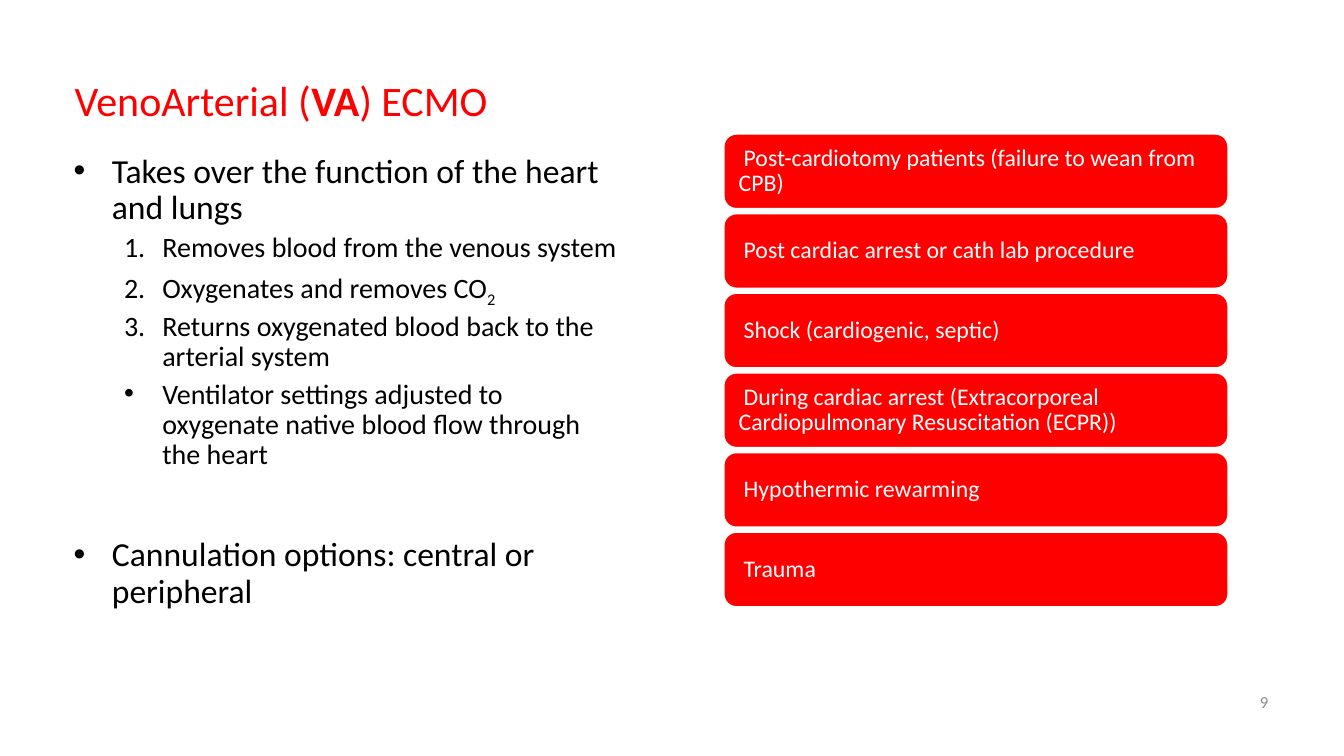
"""Builds the slide on VenoArterial ECMO."""
from lxml.etree import SubElement
from pptx import Presentation
from pptx.dml.color import RGBColor
from pptx.enum.shapes import MSO_SHAPE as Shape
from pptx.enum.text import MSO_ANCHOR as Anchor, MSO_AUTO_SIZE as AutoSize, PP_ALIGN as Align
from pptx.oxml.ns import qn
from pptx.util import Inches, Pt

RED, WHITE, BLACK, GREY = "FF0000", "FFFFFF", "000000", "8C8C8C"
INDICATIONS = [
    "Post-cardiotomy patients (failure to wean from CPB)",
    "Post cardiac arrest or cath lab procedure",
    "Shock (cardiogenic, septic)",
    "During cardiac arrest (Extracorporeal Cardiopulmonary Resuscitation (ECPR))",
    "Hypothermic rewarming",
    "Trauma",
]
POINTS = [
    (0, "•", 0, ["Takes over the function of the heart and lungs"]),
    (1, "1.", 5, ["Removes blood from the venous system"]),
    (1, "1.", 5, ["Oxygenates and removes CO", "2"]),
    (1, "1.", 5, ["Returns oxygenated blood back to the arterial system"]),
    (1, "•", 5, ["Ventilator settings adjusted to oxygenate native blood flow through the heart"]),
    (0, "•", 48, ["Cannulation options: central or peripheral"]),
]


def color(hex_value):
    """Turn a hex string into a colour."""
    return RGBColor.from_string(hex_value)


def add_run(paragraph, text, size, hex_value, bold=False):
    """Add one formatted run and return it."""
    run = paragraph.add_run()
    run.text = text
    run.font.name = "Calibri"
    run.font.size = Pt(size)
    run.font.bold = bold
    run.font.color.rgb = color(hex_value)
    return run


def place(shape, left, top, width, height, anchor):
    """Position a text shape and return its wrapped text frame."""
    shape.left, shape.top = Inches(left), Inches(top)
    shape.width, shape.height = Inches(width), Inches(height)
    frame = shape.text_frame
    frame.auto_size = AutoSize.NONE
    frame.word_wrap = True
    frame.vertical_anchor = anchor
    return frame


def set_indent(paragraph, margin, first_line):
    """Set the left margin and first-line indent of a paragraph."""
    properties = paragraph._p.get_or_add_pPr()
    properties.set("marL", str(Inches(margin)))
    properties.set("indent", str(Inches(first_line)))
    return properties


def set_bullet(paragraph, mark, margin):
    """Give a paragraph a hanging bullet or automatic number."""
    properties = set_indent(paragraph, margin, -0.38)
    if mark == "1.":
        SubElement(properties, qn("a:buFont"), typeface="+mj-lt")
        SubElement(properties, qn("a:buAutoNum"), type="arabicPeriod")
    else:
        SubElement(properties, qn("a:buFont"), typeface="Arial")
        SubElement(properties, qn("a:buChar"), char=mark)


def fill_title(title):
    """Write the slide title."""
    paragraph = place(title, 0.64, 0.73, 5.61, 0.59, Anchor.MIDDLE).paragraphs[0]
    paragraph.alignment = Align.LEFT
    paragraph.line_spacing = 0.9
    for text, bold in [("VenoArterial (", False), ("VA", True), (") ECMO", False)]:
        add_run(paragraph, text, 30, RED, bold)


def fill_points(body):
    """Write the two-level list."""
    frame = place(body, 0.63, 1.48, 5.62, 4.85, Anchor.TOP)
    for index, (level, mark, space, texts) in enumerate(POINTS):
        paragraph = frame.add_paragraph() if index else frame.paragraphs[0]
        paragraph.level = level
        set_bullet(paragraph, mark, 0.38 + 0.5 * level)
        paragraph.line_spacing = 0.9
        paragraph.space_before = Pt(space)
        main_text, *subscripts = texts
        size = 20 if level else 24
        add_run(paragraph, main_text, size, BLACK)
        for subscript in subscripts:
            run = add_run(paragraph, subscript, size, BLACK)
            run._r.get_or_add_rPr().set("baseline", "-25000")


def add_indication(slide, top, text):
    """Add one red rounded box."""
    box = slide.shapes.add_shape(Shape.ROUNDED_RECTANGLE, 0, 0, 0, 0)
    frame = place(box, 7.18, top, 5, 0.74, Anchor.MIDDLE)
    box.shadow.inherit = False
    box.fill.solid()
    box.fill.fore_color.rgb = color(RED)
    box.line.color.rgb = color(WHITE)
    box.line.width = Pt(1)
    frame.margin_left = frame.margin_right = Inches(0.11)
    paragraph = frame.paragraphs[0]
    paragraph.alignment = Align.LEFT
    paragraph.line_spacing = 0.9
    set_indent(paragraph, 0, 0.05)
    add_run(paragraph, text, 17, WHITE)


def add_page_number(slide, number):
    """Add the page number at the lower right."""
    box = slide.shapes.add_textbox(0, 0, 0, 0)
    paragraph = place(box, 9.68, 6.76, 3, 0.4, Anchor.MIDDLE).paragraphs[0]
    paragraph.alignment = Align.RIGHT
    add_run(paragraph, number, 12, GREY)


def main():
    """Build and save the slide."""
    deck = Presentation()
    deck.slide_width, deck.slide_height = Inches(13.33), Inches(7.5)
    slide = deck.slides.add_slide(deck.slide_layouts[1])
    fill_title(slide.shapes.title)
    fill_points(slide.placeholders[1])
    for row, text in enumerate(INDICATIONS):
        add_indication(slide, 1.33 + 0.79 * row, text)
    add_page_number(slide, "9")
    deck.save("out.pptx")


if __name__ == "__main__":
    main()
